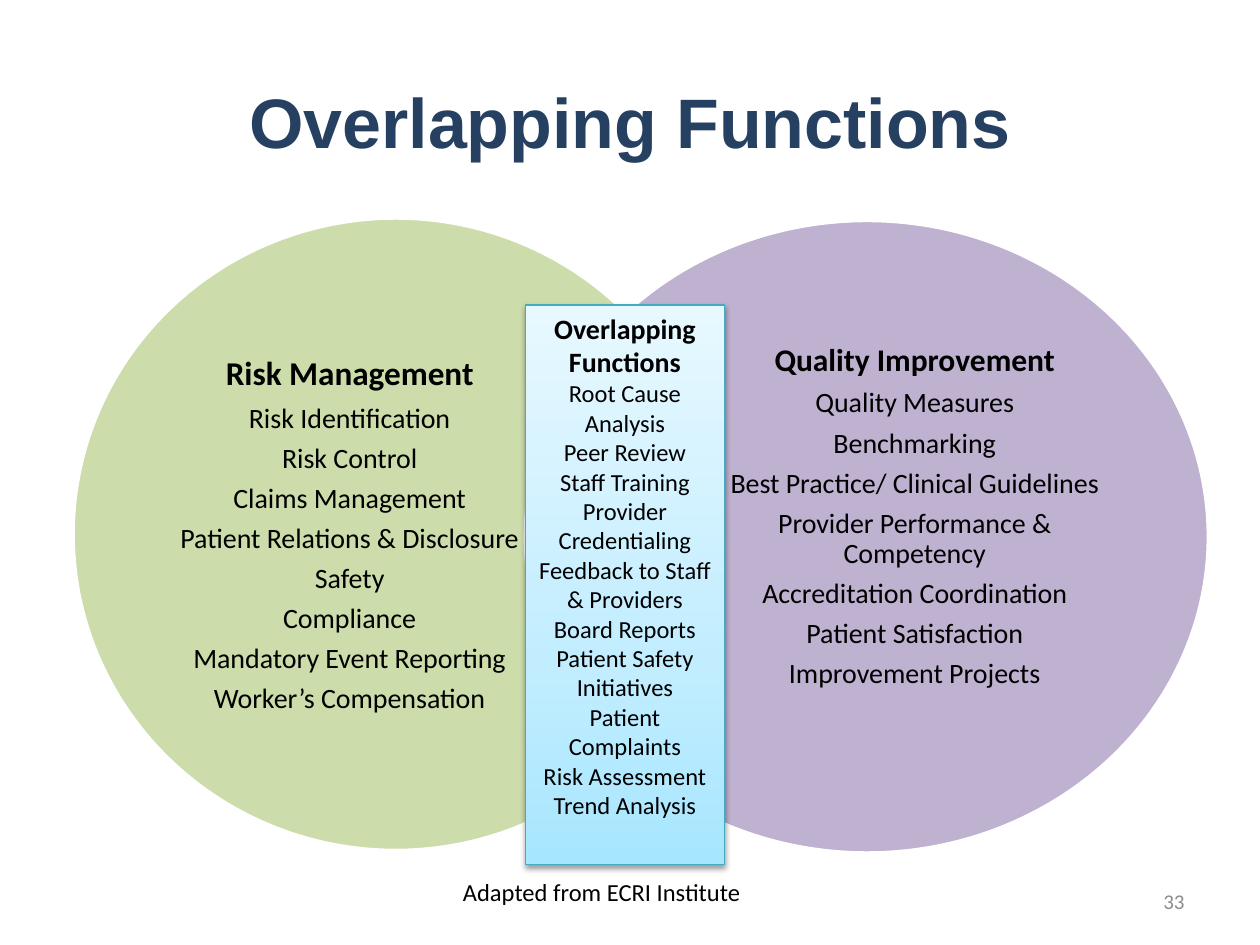
from copy import deepcopy
from dataclasses import dataclass

from pptx import Presentation
from pptx.dml.color import RGBColor
from pptx.enum.shapes import MSO_SHAPE
from pptx.enum.text import MSO_ANCHOR, PP_ALIGN
from pptx.oxml import parse_xml
from pptx.oxml.ns import nsdecls, qn
from pptx.util import Inches, Pt


@dataclass(frozen=True)
class Theme:
    title_font: str = "Arial"
    font: str = "Calibri"
    navy: str = "254061"
    green: str = "9BBB59"
    purple: str = "8064A2"
    teal: str = "46AAC5"
    black: str = "000000"
    white: str = "FFFFFF"
    grey: str = "8C8C8C"
    sky: tuple = ((0, "A7E6FF"), (0.35, "C1EDFF"), (1, "E7F8FF"))
    title: int = 40
    body: int = 16
    small: int = 14
    number: int = 12


@dataclass(frozen=True)
class Box:
    col: float
    row: float
    cols: float
    rows: float

    def inner(self, col, row, cols, rows):
        return Box(self.col + col, self.row + row, cols, rows)

    def emu(self):
        return [Inches(round(n * CELL, 2))
                for n in (self.col, self.row, self.cols, self.rows)]


THEME = Theme()
CELL = 0.1
SLIDE = Box(0, 0, 100, 75)

RISK = ["Risk Management", "Risk Identification", "Risk Control",
        "Claims Management", "Patient Relations & Disclosure", "Safety",
        "Compliance", "Mandatory Event Reporting", "Worker’s Compensation"]
QUALITY = ["Quality Improvement", "Quality Measures", "Benchmarking",
           "Best Practice/ Clinical Guidelines",
           "Provider Performance & Competency", "Accreditation Coordination",
           "Patient Satisfaction", "Improvement Projects"]
OVERLAP = ["Overlapping Functions", "Root Cause Analysis", "Peer Review",
           "Staff Training", "Provider Credentialing",
           "Feedback to Staff & Providers", "Board Reports",
           "Patient Safety Initiatives", "Patient Complaints",
           "Risk Assessment", "Trend Analysis"]


def rgb(value):
    return RGBColor.from_string(value)


def apply(obj, formats):
    for name, value in formats.items():
        setattr(obj, name, value)


def write(tf, lines, size, head=None, color=THEME.black, font=THEME.font,
          bold=False, align=PP_ALIGN.CENTER, spacing=None, after=0, **frame):
    apply(tf, {"word_wrap": True, "vertical_anchor": MSO_ANCHOR.TOP, **frame})
    for i, line in enumerate(lines):
        p = tf.paragraphs[0] if i == 0 else tf.add_paragraph()
        is_head = head is not None and i == 0
        pts = head if is_head else size
        apply(p, {"alignment": align, "line_spacing": spacing,
                  "space_after": Pt(round(pts * after, 2))})
        r = p.add_run()
        r.text = line
        apply(r.font, {"name": font, "size": Pt(pts), "bold": bold or is_head})
        r.font.color.rgb = rgb(color)


def add_title(s, box, text):
    sp = s.shapes.title
    apply(sp, dict(zip(("left", "top", "width", "height"), box.emu())))
    write(sp.text_frame, [text], THEME.title, color=THEME.navy,
          font=THEME.title_font, bold=True, vertical_anchor=MSO_ANCHOR.MIDDLE)


def add_text(s, box, lines, size, **formats):
    sp = s.shapes.add_textbox(*box.emu())
    write(sp.text_frame, lines, size, **formats)


def add_circle(s, box, color, text_box, lines, head, bottom=0):
    sp = s.shapes.add_shape(MSO_SHAPE.OVAL, *box.emu())
    sp.shadow.inherit = False
    sp.fill.solid()
    sp.fill.fore_color.rgb = rgb(color)
    clr = sp._element.spPr.find(qn("a:solidFill"))[0]
    clr.append(parse_xml(f'<a:alpha {nsdecls("a")} val="50000"/>'))
    sp.line.color.rgb = rgb(THEME.white)
    sp.line.width = Pt(2)
    add_text(s, box.inner(*text_box), lines, THEME.body, head=head,
             spacing=0.9, after=0.35, vertical_anchor=MSO_ANCHOR.MIDDLE,
             margin_left=0, margin_right=0, margin_top=0,
             margin_bottom=Inches(bottom * CELL))


def add_overlap(s, box, lines):
    sp = s.shapes.add_shape(MSO_SHAPE.RECTANGLE, *box.emu())
    sp.fill.gradient()
    sp.fill.gradient_angle = 90
    stops = sp._element.spPr.find(".//" + qn("a:gsLst"))
    stops.insert(1, deepcopy(stops[0]))
    for stop, (position, color) in zip(sp.fill.gradient_stops, THEME.sky):
        stop.position = position
        stop.color.rgb = rgb(color)
    sp.line.color.rgb = rgb(THEME.teal)
    sp.line.width = Pt(0.75)
    sp.shadow.inherit = False
    sp._element.spPr.find(qn("a:effectLst")).append(parse_xml(
        f'<a:outerShdw {nsdecls("a")} blurRad="40000" dist="20000" '
        f'dir="5400000" rotWithShape="0"><a:srgbClr val="{THEME.black}">'
        '<a:alpha val="38000"/></a:srgbClr></a:outerShdw>'))
    write(sp.text_frame, lines, THEME.small, head=THEME.body)


def main():
    prs = Presentation()
    prs.slide_width, prs.slide_height = SLIDE.emu()[2:]
    s = prs.slides.add_slide(prs.slide_layouts[5])
    add_title(s, SLIDE.inner(5, 3.3, 90, 12.5), "Overlapping Functions")
    add_circle(s, SLIDE.inner(5.8, 17.3, 51.2, 50.2), THEME.green,
               (7.2, 6, 29.5, 38.4), RISK, head=19)
    add_circle(s, SLIDE.inner(41.7, 17.5, 54.2, 50.2), THEME.purple,
               (15.3, 5.9, 31.2, 38.4), QUALITY, head=18, bottom=3.2)
    add_overlap(s, SLIDE.inner(41.7, 24.2, 15.8, 44.4), OVERLAP)
    add_text(s, SLIDE.inner(28.7, 69.1, 38.1, 3.4),
             ["Adapted from ECRI Institute"], THEME.small)
    add_text(s, SLIDE.inner(71.7, 69.5, 23.3, 4), ["33"], THEME.number,
             color=THEME.grey, align=PP_ALIGN.RIGHT,
             vertical_anchor=MSO_ANCHOR.MIDDLE)
    prs.save("out.pptx")


if __name__ == "__main__":
    main()
